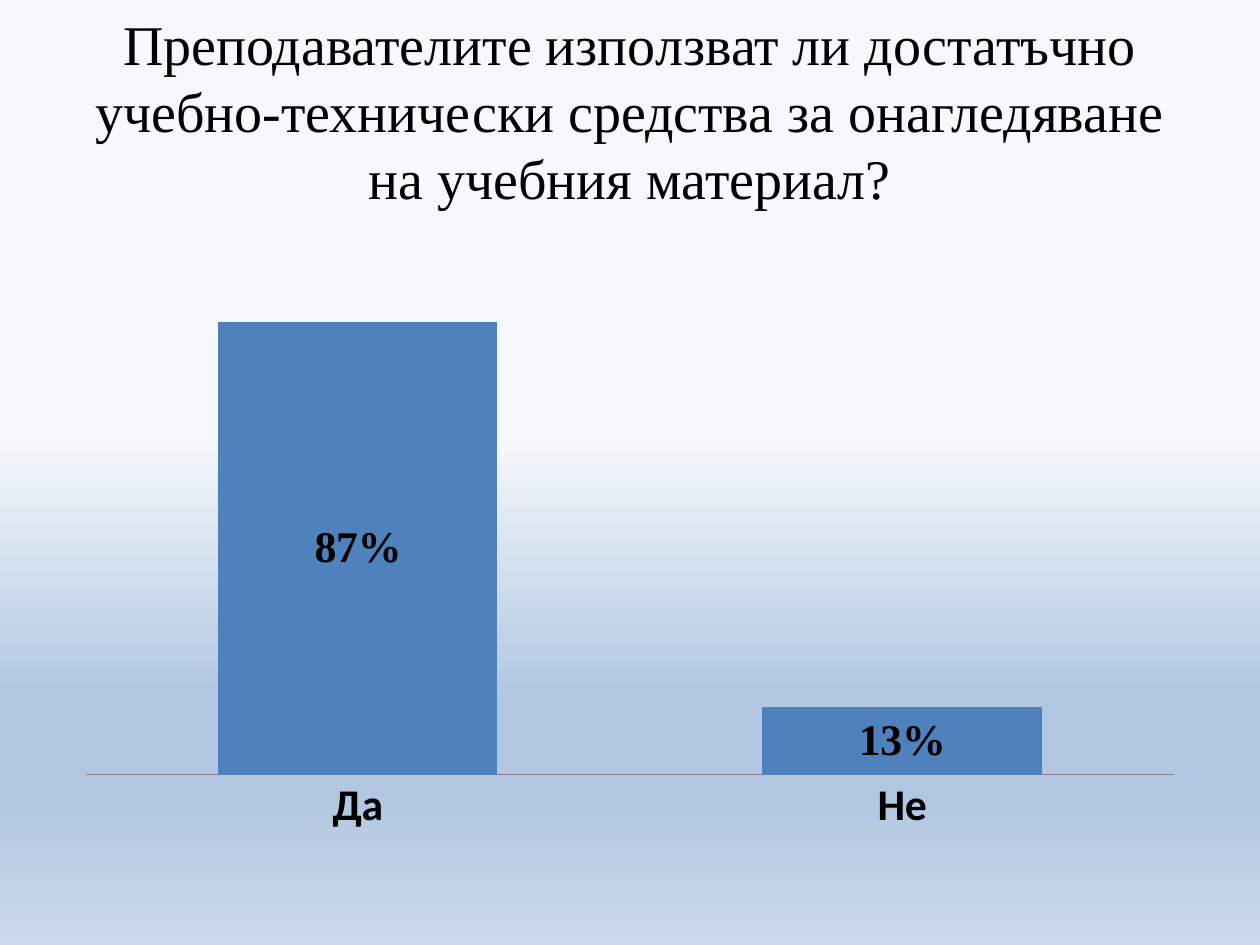
from lxml.etree import SubElement
from pptx import Presentation
from pptx.chart.data import CategoryChartData
from pptx.dml.color import RGBColor
from pptx.enum.chart import XL_CHART_TYPE, XL_LABEL_POSITION, XL_TICK_MARK
from pptx.enum.text import MSO_ANCHOR, PP_ALIGN
from pptx.oxml.ns import qn
from pptx.util import Cm, Pt

QUESTION = ("Преподавателите използват ли достатъчно учебно-технически "
            "средства за онагледяване на учебния материал?")
ANSWERS = {"Да": 0.87, "Не": 0.13}
BACKGROUND_STOPS = [(46, "F6F9FC"), (74, "B0C6E1"), (83, "B0C6E1"), (100, "CAD9EB")]
SERIF = "Times New Roman"


def color(value):
    return RGBColor.from_string(value)


def set_font(font, name, size, bold=False):
    font.name = name
    font.size = Pt(size)
    font.bold = bold
    font.color.rgb = color("000000")


def paint_background(slide, stops):
    fill = slide.background.fill
    fill.gradient()
    fill.gradient_angle = 270
    stop_list = slide.background._cSld.find(".//" + qn("a:gsLst"))
    for stop in list(stop_list):
        stop_list.remove(stop)
    for percent, value in stops:
        stop = SubElement(stop_list, qn("a:gs"), pos=str(percent * 1000))
        SubElement(stop, qn("a:srgbClr"), val=value)


def add_title(slide, left, top, width, height):
    frame = slide.shapes.add_textbox(left, top, width, height).text_frame
    frame.word_wrap = True
    frame.vertical_anchor = MSO_ANCHOR.MIDDLE
    paragraph = frame.paragraphs[0]
    paragraph.text = QUESTION
    paragraph.alignment = PP_ALIGN.CENTER
    set_font(paragraph.font, SERIF, 32)


def add_answer_chart(slide, left, top, width, height):
    data = CategoryChartData(number_format="0%")
    data.categories = list(ANSWERS)
    data.add_series("Series 1", list(ANSWERS.values()))
    chart = slide.shapes.add_chart(
        XL_CHART_TYPE.COLUMN_STACKED, left, top, width, height, data).chart
    chart.has_legend = False
    chart.has_title = False
    set_font(chart.font, "Calibri", 18)

    answer_axis = chart.category_axis
    answer_axis.major_tick_mark = XL_TICK_MARK.NONE
    answer_axis.format.line.color.rgb = color("868686")
    set_font(answer_axis.tick_labels.font, "Calibri", 25, True)

    share_axis = chart.value_axis
    share_axis.visible = False
    share_axis.has_major_gridlines = False
    share_axis.minimum_scale = 0
    share_axis.maximum_scale = 1

    plot = chart.plots[0]
    plot.gap_width = 95
    plot.overlap = 100
    plot.vary_by_categories = False
    series = plot.series[0]
    series.format.fill.solid()
    series.format.fill.fore_color.rgb = color("4F81BD")
    labels = series.data_labels
    labels.show_value = True
    labels.number_format = "0%"
    labels.number_format_is_linked = False
    labels.position = XL_LABEL_POSITION.CENTER
    set_font(labels.font, SERIF, 25, True)


def main():
    presentation = Presentation()
    presentation.slide_width = Cm(25.4)
    presentation.slide_height = Cm(19.05)
    slide = presentation.slides.add_slide(presentation.slide_layouts[6])
    margin = Cm(1.27)
    content_width = presentation.slide_width - 2 * margin
    paint_background(slide, BACKGROUND_STOPS)
    add_title(slide, margin, 0, content_width, Cm(4.45))
    add_answer_chart(slide, margin, Cm(4.88), content_width, Cm(12.14))
    presentation.save("out.pptx")


if __name__ == "__main__":
    main()
